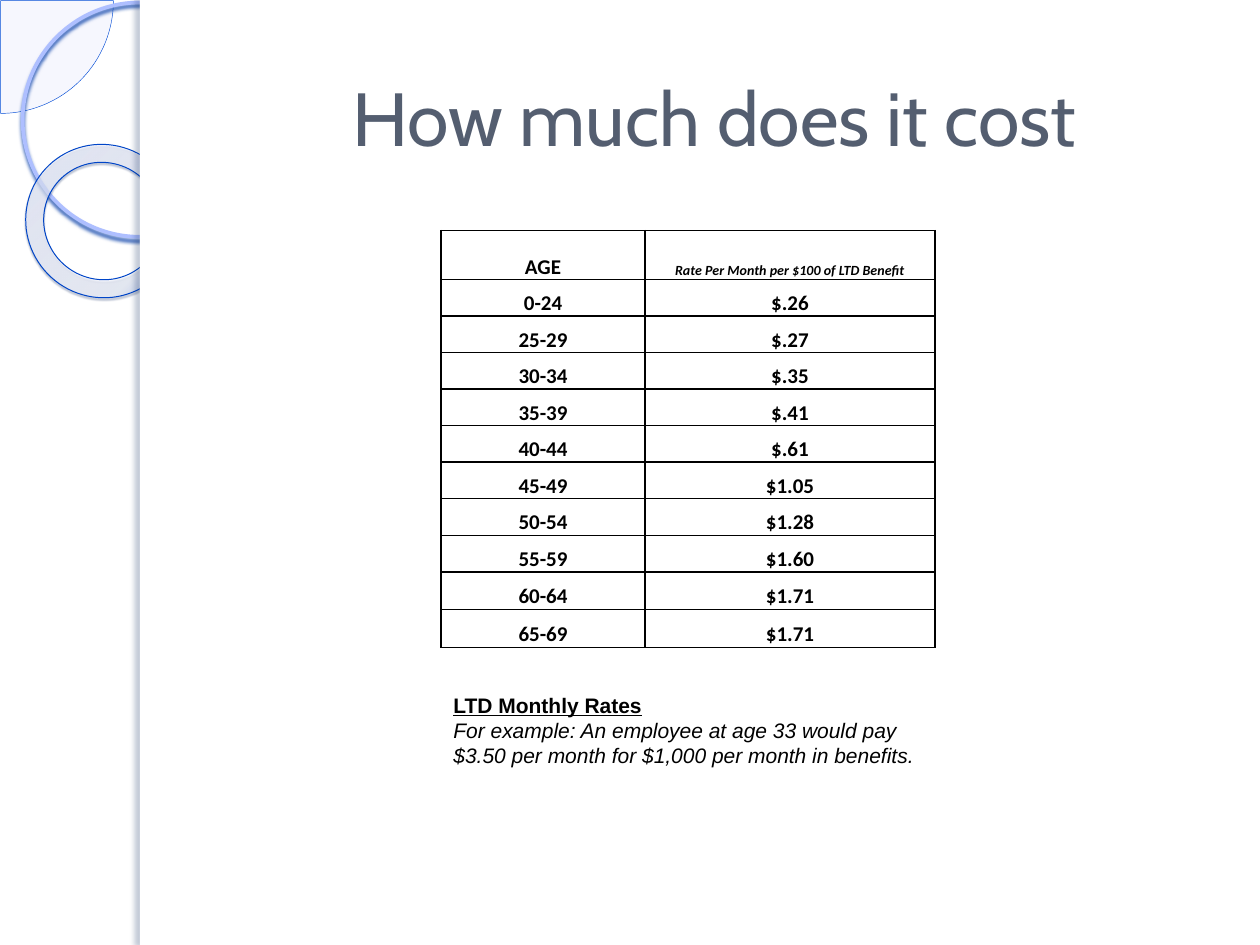
from lxml import etree
from pptx import Presentation
from pptx import util as u
from pptx.dml.color import RGBColor
from pptx.enum import shapes, text
from pptx.oxml import parse_xml
from pptx.oxml.ns import nsdecls, qn

COLORS = {
    "white": "FFFFFF", "black": "000000", "title": "545E70",
    "pie": "E4E9FC", "pie_line": "004AD6",
    "ring_line": "AEBFFF", "ring_shadow": "0E44AB",
    "donut_line": "0045C8", "donut_shadow": "00205C",
    "edge_shadow": "173265",
}
DONUT_STOPS = [(0, "EDF0FF", 70), (70, "F5F7FF", 55), (100, "004CDD", 60)]
RATES = [
    ("0-24", "$.26"), ("25-29", "$.27"), ("30-34", "$.35"), ("35-39", "$.41"),
    ("40-44", "$.61"), ("45-49", "$1.05"), ("50-54", "$1.28"),
    ("55-59", "$1.60"), ("60-64", "$1.71"), ("65-69", "$1.71"),
]
SHAPE = shapes.MSO_SHAPE


def rgb(name):
    return RGBColor.from_string(COLORS[name])


def box(*lengths):
    return [u.Inches(v) for v in lengths]


def add_color(parent, hex_color, alpha=100):
    c = etree.SubElement(parent, qn("a:srgbClr"), val=hex_color)
    etree.SubElement(c, qn("a:alpha"), val=str(alpha * 1000))


def add_decoration(s, kind, at, fill=None, line=None, width=0, shadow=None):
    """Add a preset shape; shadow is (color, alpha, blur, distance, angle)."""
    sp = s.shapes.add_shape(kind, *box(*at))
    if fill:
        sp.fill.solid()
        sp.fill.fore_color.rgb = rgb(fill)
    else:
        sp.fill.background()
    if line:
        sp.line.color.rgb = rgb(line)
        sp.line.width = u.Pt(width)
    else:
        sp.line.fill.background()
    sp.shadow.inherit = False
    if shadow:
        color, alpha, blur, dist, angle = shadow
        effects = sp.element.spPr.find(qn("a:effectLst"))
        outer = etree.SubElement(
            effects, qn("a:outerShdw"), blurRad=str(u.Pt(blur)),
            dist=str(u.Pt(dist)), dir=str(angle * 60000), rotWithShape="0")
        add_color(outer, COLORS[color], alpha)
    return sp


def set_radial_gradient(sp, stops, focus):
    """Replace an empty fill by a circular gradient; focus is l, t, r, b in percent."""
    grad = parse_xml(f'<a:gradFill {nsdecls("a")} rotWithShape="1"><a:gsLst/>'
                     '<a:path path="circle"/></a:gradFill>')
    for pos, color, alpha in stops:
        gs = etree.SubElement(grad[0], qn("a:gs"), pos=str(pos * 1000))
        add_color(gs, color, alpha)
    etree.SubElement(grad[1], qn("a:fillToRect"),
                     {side: str(v * 1000) for side, v in zip("ltrb", focus)})
    spPr = sp.element.spPr
    spPr.replace(spPr.find(qn("a:noFill")), grad)


def add_run(p, words, font, size, color="black", bold=False, italic=False, underline=False):
    r = p.add_run()
    r.text = words
    f = r.font
    f.name, f.size, f.color.rgb = font, u.Pt(size), rgb(color)
    f.bold, f.italic, f.underline = bold, italic, underline


def add_side_art(s):
    pie = add_decoration(s, SHAPE.PIE, (-0.89, -0.89, 1.79, 1.79), "pie", "pie_line", 0.25)
    pie.adjustments[0], pie.adjustments[1] = 0, 54
    solid = pie.element.spPr.find(qn("a:solidFill"))
    etree.SubElement(solid[0], qn("a:alpha"), val="33000")

    add_decoration(s, SHAPE.OVAL, (0.18, 0.02, 1.86, 1.86), None, "ring_line", 2.15,
                   ("ring_shadow", 85, 2, 2, 90))

    donut = add_decoration(s, SHAPE.DONUT, (0.2, 1.15, 1.23, 1.21), None, "donut_line", 0.58,
                           ("donut_shadow", 35, 1, 1.2, 75))
    donut.adjustments[0] = 0.118
    donut.rotation = 38.6
    set_radial_gradient(donut, DONUT_STOPS, (-408, -50, 508, 150))

    add_decoration(s, SHAPE.RECTANGLE, (1.11, 0, 8.89, 7.5), "white")
    add_decoration(s, SHAPE.RECTANGLE, (1.11, 0, 0.08, 7.5), "white",
                   shadow=("edge_shadow", 25, 3, 3, 180))


def add_title(s, words):
    title = s.shapes.title
    title.left, title.top, title.width, title.height = box(1.57, 0.3, 8.2, 1.25)
    tf = title.text_frame
    tf.vertical_anchor = text.MSO_ANCHOR.MIDDLE
    p = tf.paragraphs[0]
    p.alignment = text.PP_ALIGN.CENTER
    add_run(p, words, "Cabin", 43, "title")
    # The side art's white panel must lie behind the title.
    title.element.getparent().append(title.element)


def set_borders(cell, width):
    tcPr = cell._tc.get_or_add_tcPr()
    for i, side in enumerate(("lnL", "lnR", "lnT", "lnB")):
        ln = parse_xml(f'<a:{side} {nsdecls("a")} w="{u.Pt(width)}"><a:solidFill/></a:{side}>')
        add_color(ln[0], COLORS["black"])
        tcPr.insert(i, ln)


def fill_cell(cell, words, size=12, italic=False):
    cell.fill.background()
    set_borders(cell, 1)
    cell.margin_left = cell.margin_right = u.Inches(0.07)
    cell.margin_top = cell.margin_bottom = 0
    cell.vertical_anchor = text.MSO_ANCHOR.BOTTOM
    p = cell.text_frame.paragraphs[0]
    p.alignment = text.PP_ALIGN.CENTER
    add_run(p, words, "Calibri", size, bold=True, italic=italic)


def add_rate_table(s):
    heights = [0.39] + [0.29] * 8 + [0.3] * 2
    table = s.shapes.add_table(len(heights), 2, *box(3.5, 1.83, 3.92, sum(heights))).table
    table.first_row = table.horz_banding = False
    for col, width in zip(table.columns, (1.62, 2.3)):
        col.width = u.Inches(width)
    for row, height in zip(table.rows, heights):
        row.height = u.Inches(height)
    fill_cell(table.cell(0, 0), "AGE")
    fill_cell(table.cell(0, 1), "Rate Per Month per $100 of LTD Benefit", 8, True)
    for i, rate in enumerate(RATES, 1):
        for j, words in enumerate(rate):
            fill_cell(table.cell(i, j), words)


def add_example(s):
    tf = s.shapes.add_textbox(*box(3.5, 5.44, 10.25, 0.71)).text_frame
    tf.word_wrap = True
    tf.auto_size = text.MSO_AUTO_SIZE.SHAPE_TO_FIT_TEXT
    tf.vertical_anchor = text.MSO_ANCHOR.MIDDLE
    add_run(tf.paragraphs[0], "LTD Monthly Rates", "Arial", 12, bold=True, underline=True)
    for line in ("For example: An employee at age 33 would pay",
                 "$3.50 per month for $1,000 per month in benefits."):
        add_run(tf.add_paragraph(), line, "Arial", 12, italic=True)


def main():
    prs = Presentation()
    prs.slide_width, prs.slide_height = box(10, 7.5)
    s = prs.slides.add_slide(prs.slide_layouts.get_by_name("Title Only"))
    add_side_art(s)
    add_title(s, "How much does it cost")
    add_rate_table(s)
    add_example(s)
    prs.save("out.pptx")


if __name__ == "__main__":
    main()
